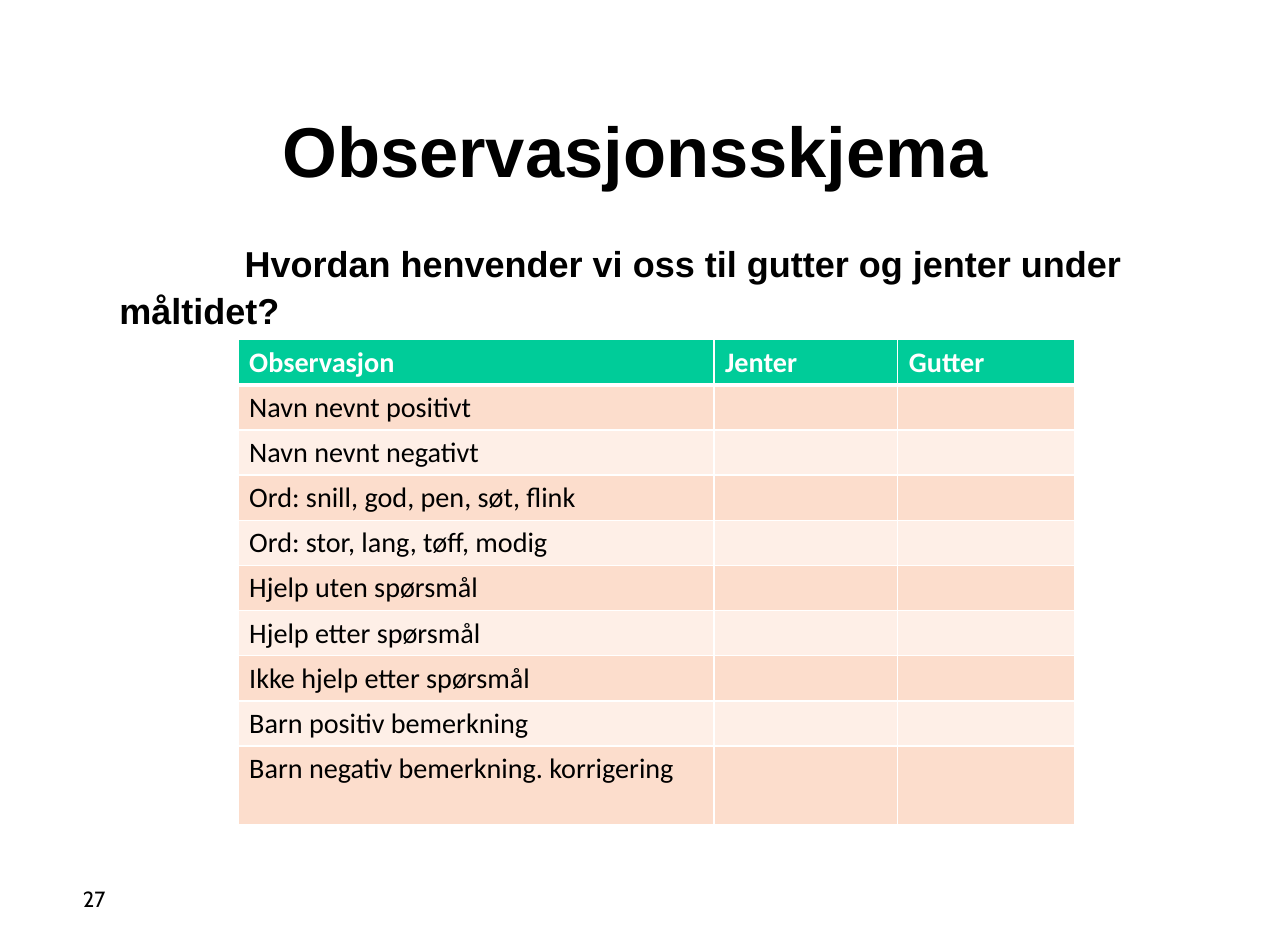
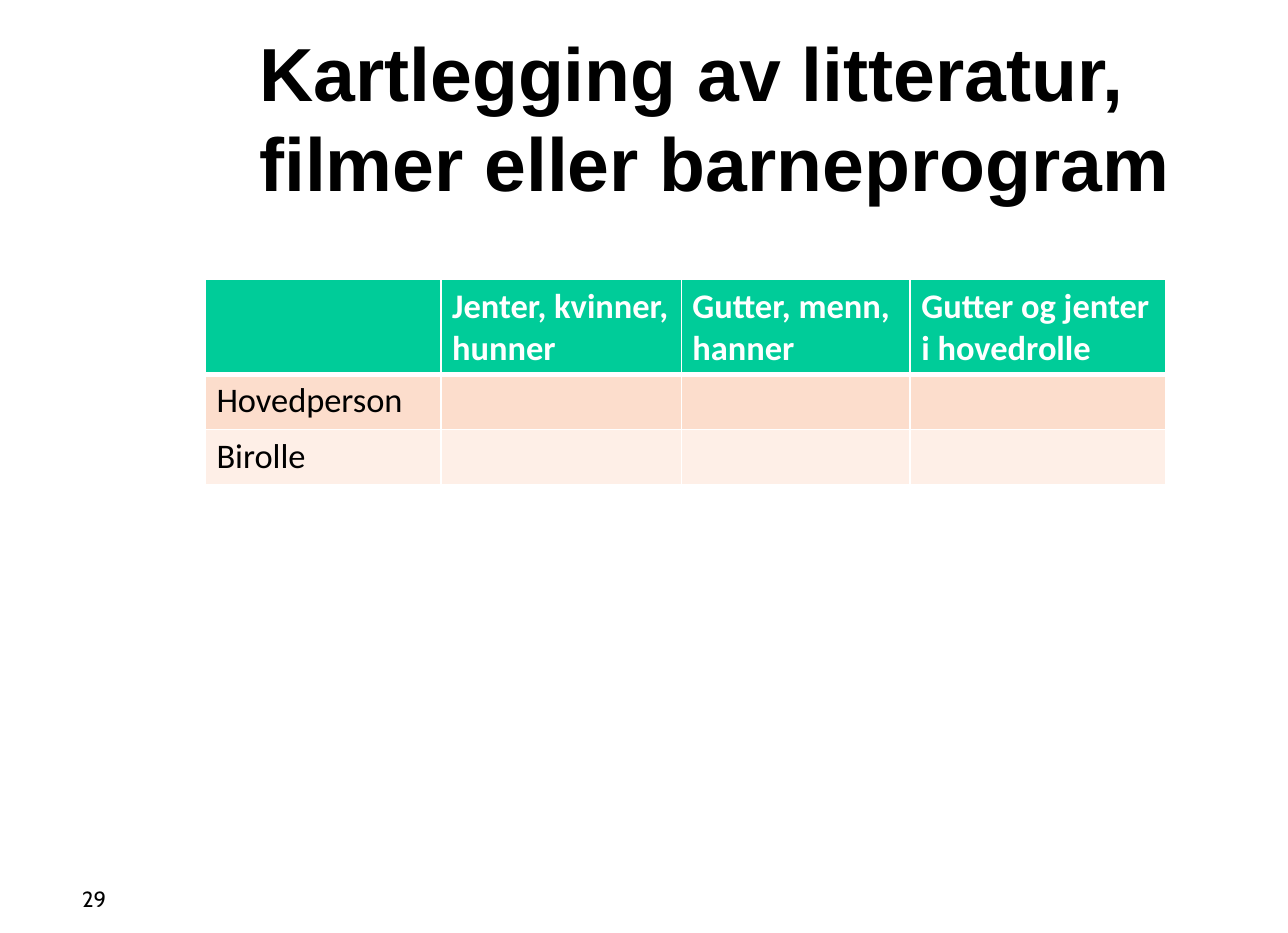
"""Build two observation-form slides, each with a title, a table and a page number."""
import pptx
import pptx.dml.color
import pptx.enum.text
import pptx.oxml
import pptx.oxml.ns
import pptx.util
from pptx.util import Inches

COLORS = {"text": "000000", "white": "FFFFFF", "header": "00CC99",
          "band_dark": "FCDDCC", "band_light": "FEEFE7"}
ALIGN = pptx.enum.text.PP_ALIGN
ANCHOR = pptx.enum.text.MSO_ANCHOR


def write(tf, text, size=18, font="Arial", color="text", bold=False,
          align=ALIGN.LEFT, anchor=ANCHOR.TOP, leading=None):
    tf.word_wrap = True
    tf.vertical_anchor = anchor
    p = tf.paragraphs[0]
    p.alignment = align
    if leading:
        p.line_spacing = pptx.util.Pt(leading)
    r = p.add_run()
    r.text = text
    r.font.size = pptx.util.Pt(size)
    r.font.name = font
    r.font.bold = bold
    r.font.color.rgb = pptx.dml.color.RGBColor.from_string(COLORS[color])
    return p


def add_grid(s, left, top, cols, heights, rows, size):
    shape = s.shapes.add_table(len(rows), len(cols), Inches(left), Inches(top),
                               Inches(sum(cols)), Inches(sum(heights)))
    table = shape.table
    table.horz_banding = False
    for column, width in zip(table.columns, cols):
        column.width = Inches(width)
    for i, labels in enumerate(rows):
        table.rows[i].height = Inches(heights[i])
        fill = "header" if i == 0 else "band_dark" if i % 2 else "band_light"
        widths = {"L": 1, "R": 1, "T": 3 if i == 1 else 1, "B": 3 if i == 0 else 1}
        for j in range(len(cols)):
            cell = table.cell(i, j)
            tcPr = cell._tc.get_or_add_tcPr()
            for side, width in widths.items():
                tcPr.append(pptx.oxml.parse_xml(
                    f'<a:ln{side} {pptx.oxml.ns.nsdecls("a")} w="{pptx.util.Pt(width)}">'
                    f'<a:solidFill><a:srgbClr val="{COLORS["white"]}"/></a:solidFill>'
                    f'</a:ln{side}>'))
            cell.fill.solid()
            cell.fill.fore_color.rgb = pptx.dml.color.RGBColor.from_string(COLORS[fill])
            if j < len(labels) and labels[j]:
                write(cell.text_frame, labels[j], size=size, font="Calibri",
                      color="text" if i else "white", bold=i == 0)


observations = ["Navn nevnt positivt", "Navn nevnt negativt",
                "Ord: snill, god, pen, søt, flink", "Ord: stor, lang, tøff, modig",
                "Hjelp uten spørsmål", "Hjelp etter spørsmål", "Ikke hjelp etter spørsmål",
                "Barn positiv bemerkning", "Barn negativ bemerkning. korrigering"]
slides = [
    dict(number="27", title="Observasjonsskjema", box=(0.49, 0.98, 10.28, 0.69),
         style=dict(size=45, align=ALIGN.CENTER),
         question="Hvordan henvender vi oss til gutter og jenter under måltidet?",
         grid=dict(left=2.11, top=3.01, cols=[4.22, 1.63, 1.57],
                   heights=[0.4] * 9 + [0.7], size=18,
                   rows=[["Observasjon", "Jenter", "Gutter"]] + [[o] for o in observations])),
    dict(number="29", title="Kartlegging av litteratur, filmer eller barneprogram",
         box=(2.2, 0.34, 8.65, 1.38), style=dict(size=48, leading=57.4), question=None,
         grid=dict(left=1.82, top=2.48, cols=[2.09, 2.13, 2.03, 2.27],
                   heights=[0.84, 0.49, 0.49], size=22,
                   rows=[["", "Jenter, kvinner, hunner", "Gutter, menn, hanner",
                          "Gutter og jenter i hovedrolle"], ["Hovedperson"], ["Birolle"]])),
]

prs = pptx.Presentation()
prs.slide_width = Inches(11.42)
prs.slide_height = Inches(8.27)

for page in slides:
    s = prs.slides.add_slide(prs.slide_layouts[6])
    number = s.shapes.add_textbox(Inches(0.31), Inches(7.8), Inches(1.05), Inches(0.47))
    write(number.text_frame, page["number"], size=14, font="Cabin", align=ALIGN.CENTER)
    title = s.shapes.add_textbox(*map(Inches, page["box"]))
    write(title.text_frame, page["title"], bold=True, anchor=ANCHOR.MIDDLE, **page["style"])
    if page["question"]:
        question = s.shapes.add_textbox(Inches(0.58), Inches(2.07), Inches(10.28), Inches(0.95))
        p = write(question.text_frame, page["question"], size=23, bold=True, leading=29.4)
        pPr = p._p.get_or_add_pPr()
        pPr.set("marL", str(Inches(0.38)))
        pPr.set("indent", str(Inches(1.11)))
    add_grid(s, **page["grid"])

prs.save("out.pptx")
